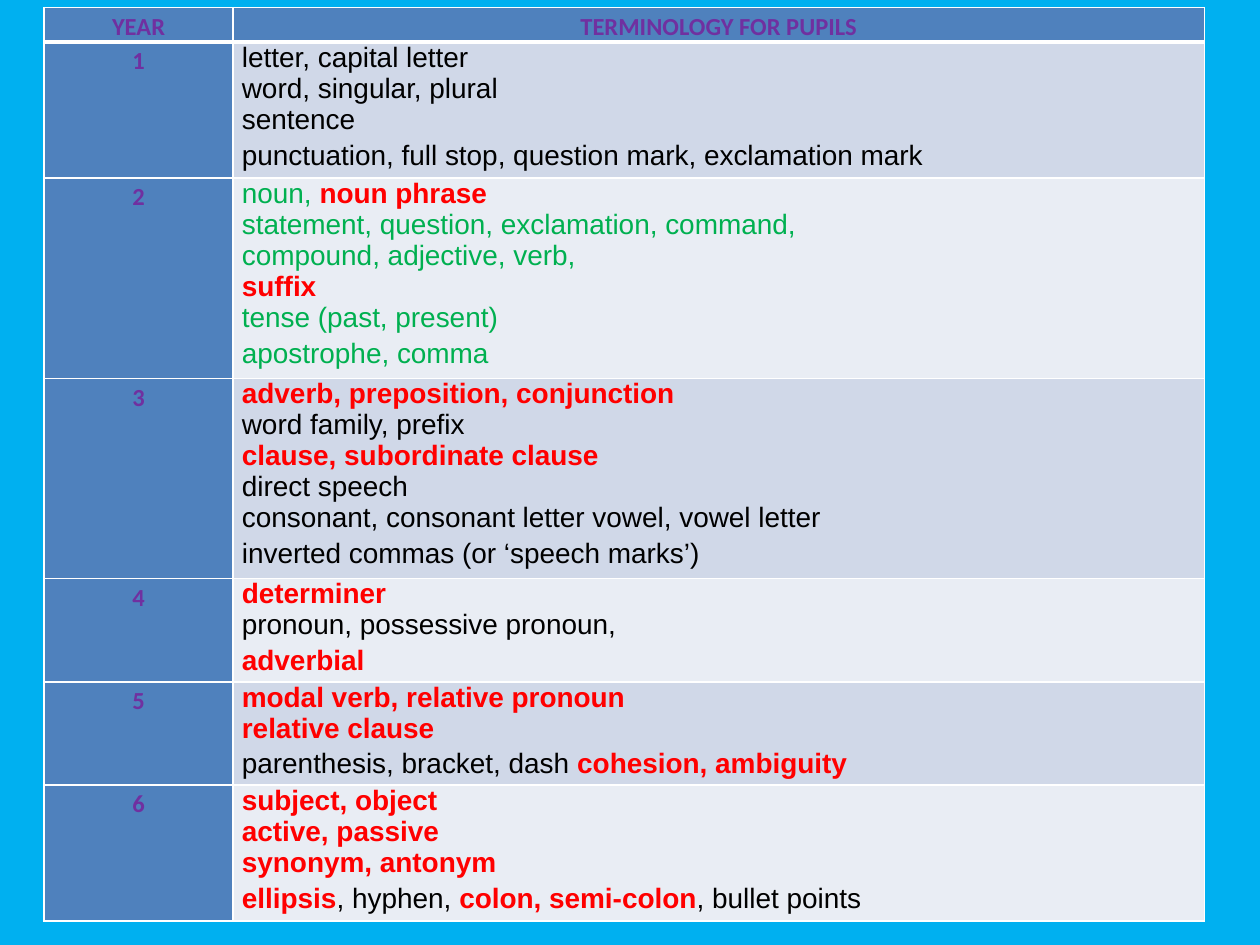
from lxml.etree import SubElement
from pptx import Presentation
from pptx.dml.color import RGBColor
from pptx.enum.text import PP_ALIGN
from pptx.oxml.ns import qn
from pptx.util import Inches, Pt

# Content: each line is a list of (words, style) runs
HEADINGS = ("YEAR", "TERMINOLOGY FOR PUPILS")
YEARS = [
    ("1", 1.08, [
        [("letter, capital letter", "plain")],
        [("word, singular, plural", "plain")],
        [("sentence", "plain")],
        [("punctuation, full stop, question mark, exclamation mark", "plain")],
    ]),
    ("2", 1.59, [
        [("noun, ", "green"), ("noun phrase", "key")],
        [("statement, question, exclamation, command,", "green")],
        [("compound, adjective, verb,", "green")],
        [("suffix", "key")],
        [("tense (past, present)", "green")],
        [("apostrophe, comma", "green")],
    ]),
    ("3", 1.59, [
        [("adverb, preposition, conjunction", "key")],
        [("word family, prefix", "plain")],
        [("clause, subordinate clause", "key")],
        [("direct speech", "plain")],
        [("consonant, consonant letter vowel, vowel letter", "plain")],
        [("inverted commas (or ‘speech marks’)", "plain")],
    ]),
    ("4", 0.82, [
        [("determiner", "key")],
        [("pronoun, possessive pronoun,", "plain")],
        [("adverbial", "key")],
    ]),
    ("5", 0.82, [
        [("modal verb, relative pronoun", "key")],
        [("relative clause", "key")],
        [("parenthesis, bracket, dash ", "plain"), ("cohesion, ambiguity", "key")],
    ]),
    ("6", 1.08, [
        [("subject, object", "key")],
        [("active, passive", "key")],
        [("synonym, antonym", "key")],
        [("ellipsis", "key"), (", hyphen, ", "plain"),
         ("colon, semi-colon", "key"), (", bullet points", "plain")],
    ]),
]

# Format values
TERM = {"name": "Arial", "size": Pt(16)}
STYLES = {
    "label": ({"name": "Calibri", "size": Pt(14), "bold": True}, "7030A0"),
    "plain": ({**TERM, "bold": False}, "000000"),
    "green": ({**TERM, "bold": False}, "00B050"),
    "key": ({**TERM, "bold": True}, "FF0000"),
}
CELL_FORMAT = {"margin_left": Inches(0.07), "margin_right": Inches(0.07),
               "margin_top": 0, "margin_bottom": 0}
BLUE, BANDS = "4F81BD", ("D0D8E8", "E9EDF4")
COLUMN_WIDTHS = (1.5, 7.71)
HEADING_HEIGHT = 0.26


def set_values(target, values):
    for name, value in values.items():
        setattr(target, name, value)


def paint(fill, colour):
    fill.solid()
    fill.fore_color.rgb = RGBColor.from_string(colour)


def add_borders(cell, top, bottom):
    properties = cell._tc.get_or_add_tcPr()
    for side, width in (("L", 1), ("R", 1), ("T", top), ("B", bottom)):
        border = SubElement(properties, qn(f"a:ln{side}"), w=str(Pt(width)))
        solid = SubElement(border, qn("a:solidFill"))
        SubElement(solid, qn("a:srgbClr"), val="FFFFFF")


def fill_cell(cell, lines, colour, align, top=1, bottom=1):
    set_values(cell, CELL_FORMAT)
    add_borders(cell, top, bottom)
    paint(cell.fill, colour)
    frame = cell.text_frame
    for index, line in enumerate(lines):
        paragraph = frame.add_paragraph() if index else frame.paragraphs[0]
        paragraph.alignment = align
        # The last line of every cell is set looser
        paragraph.line_spacing = 1.15 if index == len(lines) - 1 else 1.0
        for words, style in line:
            run = paragraph.add_run()
            run.text = words
            values, ink = STYLES[style]
            set_values(run.font, values)
            run.font.color.rgb = RGBColor.from_string(ink)


def main():
    deck = Presentation()
    deck.slide_width, deck.slide_height = Inches(10), Inches(7.5)
    slide = deck.slides.add_slide(deck.slide_layouts[6])
    paint(slide.background.fill, "00B0F0")

    # Table grid
    heights = [HEADING_HEIGHT] + [height for _, height, _ in YEARS]
    table = slide.shapes.add_table(
        len(heights), len(COLUMN_WIDTHS), Inches(0.35), Inches(0.06),
        Inches(sum(COLUMN_WIDTHS)), Inches(sum(heights))).table
    table.horz_banding = False
    for column, width in zip(table.columns, COLUMN_WIDTHS):
        column.width = Inches(width)
    for row, height in zip(table.rows, heights):
        row.height = Inches(height)

    # Heading row
    for column, heading in enumerate(HEADINGS):
        fill_cell(table.cell(0, column), [[(heading, "label")]], BLUE,
                  PP_ALIGN.CENTER, bottom=3)

    # One row for each year
    for row, (year, _, terms) in enumerate(YEARS, 1):
        top = 3 if row == 1 else 1
        fill_cell(table.cell(row, 0), [[(year, "label")]], BLUE,
                  PP_ALIGN.CENTER, top)
        fill_cell(table.cell(row, 1), terms, BANDS[(row - 1) % 2],
                  PP_ALIGN.LEFT, top)

    deck.save("out.pptx")


if __name__ == "__main__":
    main()
